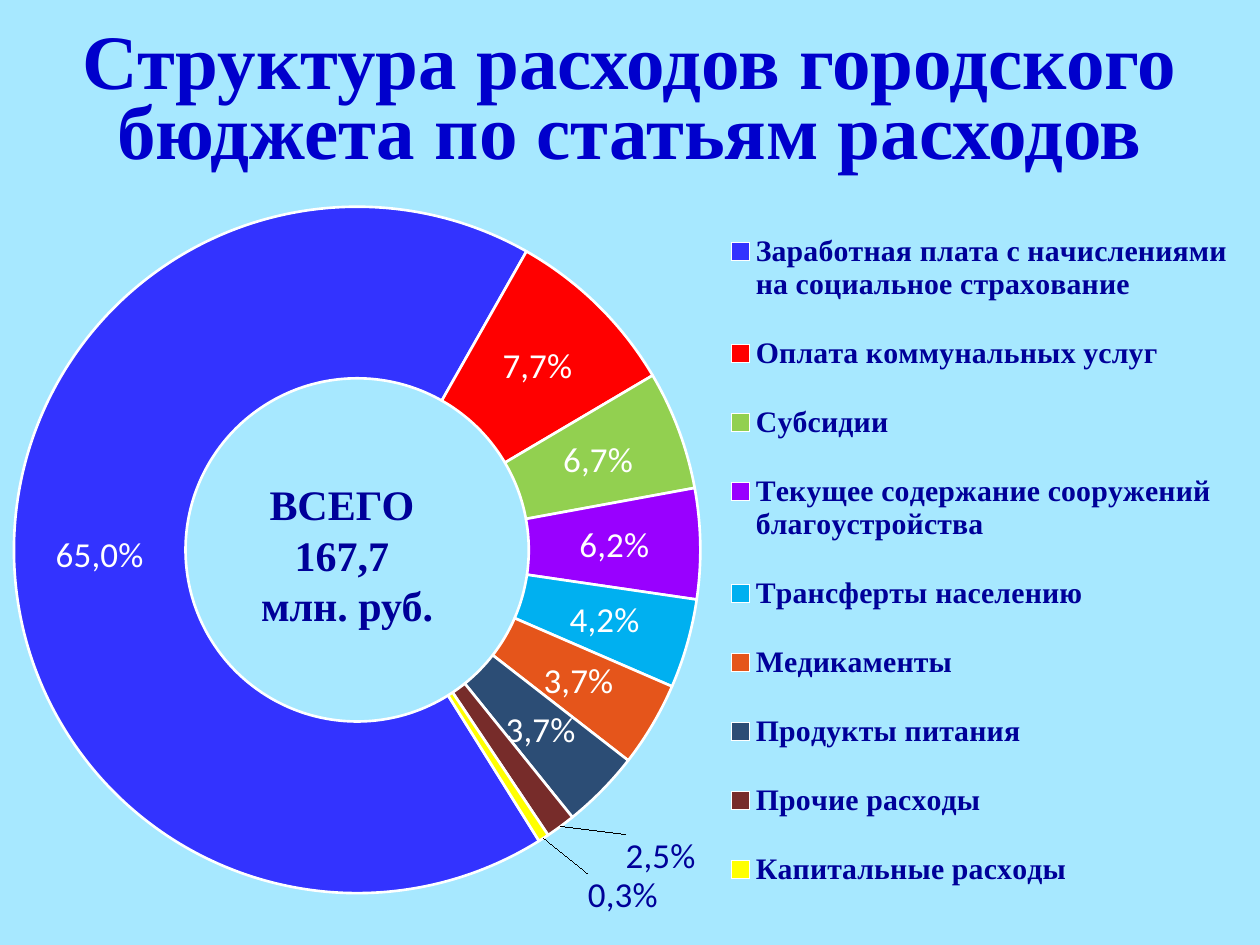
"""Build a slide with a doughnut chart of city budget spending by item."""
from dataclasses import dataclass
from typing import Optional

from lxml import etree
from pptx import Presentation
from pptx import util as u
from pptx.chart.data import CategoryChartData
from pptx.dml.color import RGBColor
from pptx.enum import chart as charts, text
from pptx.oxml.ns import qn

WIDTH, HEIGHT = u.Inches(10), u.Inches(7.5)
SERIF, SANS = "Times New Roman", "Calibri"
NAVY, WHITE = "000099", "FFFFFF"


@dataclass
class Expense:
    name: str
    share: float
    label: str
    color: str
    label_shift: Optional[tuple[float, float]] = None


EXPENSES = [
    Expense("Заработная плата с начислениями на социальное страхование", 0.671, "65,0%", "3333FF"),
    Expense("Оплата коммунальных услуг", 0.083, "7,7%", "FF0000"),
    Expense("Субсидии", 0.056, "6,7%", "92D050"),
    Expense("Текущее содержание сооружений благоустройства", 0.052, "6,2%", "9900FF"),
    Expense("Трансферты населению", 0.042, "4,2%", "00B0F0"),
    Expense("Медикаменты", 0.04, "3,7%", "E5551B"),
    Expense("Продукты питания", 0.037, "3,7%", "2C4D75"),
    Expense("Прочие расходы", 0.014, "2,5%", "772C2A", (0.12, 0.13)),
    Expense("Капитальные расходы", 0.005, "0,3%", "FFFF00", (0.1, 0.17)),
]


def paint(fill, color: str) -> None:
    """Make a fill solid in a hex colour."""
    fill.solid()
    fill.fore_color.rgb = RGBColor.from_string(color)


def style(font, size: float, color: str, name: str, bold: bool) -> None:
    """Set the size, colour, typeface and weight of a font."""
    font.size, font.name, font.bold = u.Pt(size), name, bold
    font.color.rgb = RGBColor.from_string(color)


def manual_layout(**settings) -> etree._Element:
    """Return a chart layout element with the given settings in order."""
    layout = etree.Element(qn("c:layout"))
    manual = etree.SubElement(layout, qn("c:manualLayout"))
    for tag, value in settings.items():
        etree.SubElement(manual, qn(f"c:{tag}")).set("val", str(value))
    return layout


def area_layout(x: float, y: float, w: float, h: float, **target) -> etree._Element:
    """Return a layout that fixes an area as shares of the chart."""
    return manual_layout(**target, xMode="edge", yMode="edge", x=x, y=y, w=w, h=h)


def add_title(slide, wording: str) -> None:
    """Place and format the title placeholder."""
    title = slide.shapes.title
    title.left, title.top = int(WIDTH * 0.05), u.Inches(0.21)
    title.width, title.height = int(WIDTH * 0.9), u.Inches(1.25)
    frame = title.text_frame
    frame.word_wrap, frame.vertical_anchor = True, text.MSO_ANCHOR.MIDDLE
    frame.auto_size = text.MSO_AUTO_SIZE.NONE
    paragraph = frame.paragraphs[0]
    paragraph.alignment, paragraph.line_spacing = text.PP_ALIGN.CENTER, u.Pt(40)
    run = paragraph.add_run()
    run.text = wording
    style(run.font, 44, "0000CC", SERIF, True)


def format_point(series, index: int, expense: Expense) -> None:
    """Colour one slice and write its label."""
    point = series.points[index]
    paint(point.format.fill, expense.color)
    paint(point.format.line.fill, WHITE)
    point.format.line.width = u.Pt(1.5)
    run = point.data_label.text_frame.paragraphs[0].add_run()
    run.text = expense.label
    style(run.font, 20, NAVY if expense.label_shift else WHITE, SANS, False)
    if expense.label_shift:
        x, y = expense.label_shift
        label = series.data_labels._element.findall(qn("c:dLbl"))[index]
        label.find(qn("c:idx")).addnext(manual_layout(x=x, y=y))


def add_doughnut(slide, expenses: list[Expense]) -> None:
    """Add the doughnut chart with its legend."""
    data = CategoryChartData(number_format="0.0%")
    data.categories = [expense.name for expense in expenses]
    data.add_series("Series 1", [expense.share for expense in expenses])
    top = u.Inches(1.46)
    chart = slide.shapes.add_chart(
        charts.XL_CHART_TYPE.DOUGHNUT, 0, top, WIDTH, HEIGHT - top, data).chart
    chart.has_title = False
    style(chart.font, 10, "000000", SANS, False)
    plot = chart.plots[0]
    plot.vary_by_categories = True
    for tag, value in (("c:firstSliceAng", 148), ("c:holeSize", 50)):
        plot._element.find(qn(tag)).set("val", str(value))
    series = plot.series[0]
    labels = series.data_labels
    labels.show_value, labels.number_format = True, "0.0%"
    labels.number_format_is_linked = False
    style(labels.font, 20, WHITE, SANS, True)
    for index, expense in enumerate(expenses):
        format_point(series, index, expense)

    area = plot._element.getparent()
    for layout in area.findall(qn("c:layout")):
        area.remove(layout)
    area.insert(0, area_layout(0.011, 0.03, 0.545, 0.902, layoutTarget="inner"))

    chart.has_legend = True
    legend = chart.legend
    legend.position = charts.XL_LEGEND_POSITION.RIGHT
    legend.include_in_layout = False
    style(legend.font, 17, NAVY, SERIF, True)
    for layout in legend._element.findall(qn("c:layout")):
        legend._element.remove(layout)
    position = legend._element.find(qn("c:legendPos"))
    position.addnext(area_layout(0.565, 0.02, 0.425, 0.95))


def add_total(slide, lines: list[str]) -> None:
    """Write the total in the hole of the doughnut."""
    box = slide.shapes.add_textbox(*map(u.Inches, (1.85, 3.75, 1.81, 1.31)))
    frame = box.text_frame
    frame.word_wrap = True
    frame.auto_size = text.MSO_AUTO_SIZE.SHAPE_TO_FIT_TEXT
    for index, line in enumerate(lines):
        paragraph = frame.add_paragraph() if index else frame.paragraphs[0]
        paragraph.alignment = text.PP_ALIGN.CENTER
        run = paragraph.add_run()
        run.text = line
        style(run.font, 24, NAVY, SERIF, True)


def main() -> None:
    """Build and save the presentation."""
    presentation = Presentation()
    presentation.slide_width, presentation.slide_height = WIDTH, HEIGHT
    slide = presentation.slides.add_slide(presentation.slide_layouts.get_by_name("Title Only"))
    paint(slide.background.fill, "A7E8FF")
    add_title(slide, "Структура расходов городского бюджета по статьям расходов")
    add_doughnut(slide, EXPENSES)
    add_total(slide, ["ВСЕГО ", "167,7 ", "млн. руб."])
    presentation.save("out.pptx")


if __name__ == "__main__":
    main()
